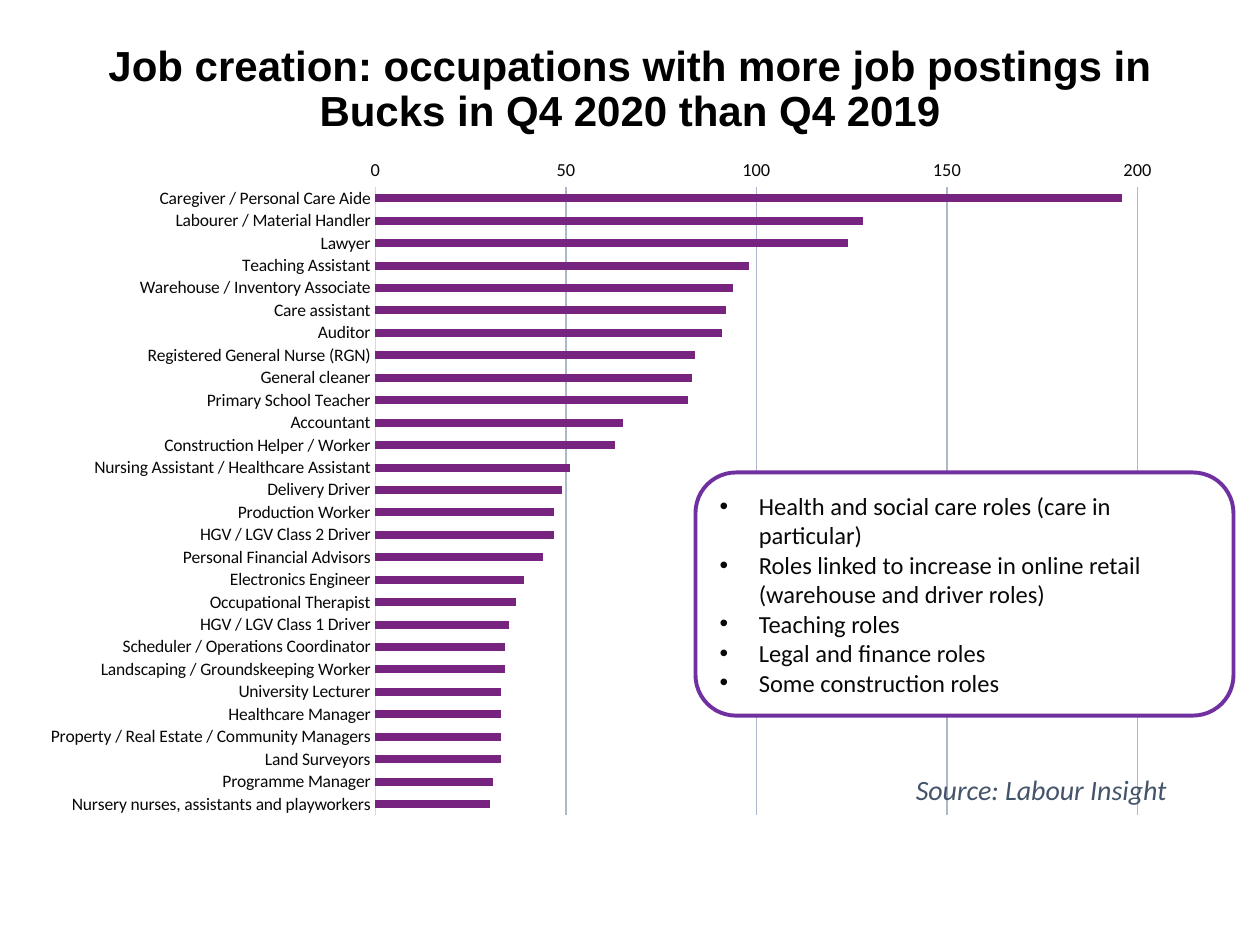
from lxml import etree
from pptx import Presentation
from pptx.chart.data import CategoryChartData
from pptx.dml.color import RGBColor
from pptx.enum.chart import XL_CHART_TYPE, XL_TICK_MARK
from pptx.enum.shapes import MSO_SHAPE
from pptx.enum.text import MSO_ANCHOR, MSO_AUTO_SIZE, PP_ALIGN
from pptx.oxml import parse_xml
from pptx.oxml.ns import nsdecls, qn
from pptx.util import Pt

BAR = XL_CHART_TYPE.BAR_CLUSTERED
NO_TICK = XL_TICK_MARK.NONE
ROUNDED = MSO_SHAPE.ROUNDED_RECTANGLE
MIDDLE = MSO_ANCHOR.MIDDLE
CENTER, LEFT = PP_ALIGN.CENTER, PP_ALIGN.LEFT
GROW, FIXED = MSO_AUTO_SIZE.SHAPE_TO_FIT_TEXT, MSO_AUTO_SIZE.NONE

EMU_PER_PX = 9144  # 100 px to the inch
TITLE_ONLY = 5
COLOURS = {
    "black": "000000", "ink": "080808", "white": "FFFFFF", "bar": "772480",
    "border": "7030A0", "grid": "ADB9CA", "axis": "D9D9D9", "source": "44546A",
}
POSTINGS = {
    "Caregiver / Personal Care Aide": 196,
    "Labourer / Material Handler": 128,
    "Lawyer": 124,
    "Teaching Assistant": 98,
    "Warehouse / Inventory Associate": 94,
    "Care assistant": 92,
    "Auditor": 91,
    "Registered General Nurse (RGN)": 84,
    "General cleaner": 83,
    "Primary School Teacher": 82,
    "Accountant": 65,
    "Construction Helper / Worker": 63,
    "Nursing Assistant / Healthcare Assistant": 51,
    "Delivery Driver": 49,
    "Production Worker": 47,
    "HGV / LGV Class 2 Driver": 47,
    "Personal Financial Advisors": 44,
    "Electronics Engineer": 39,
    "Occupational Therapist": 37,
    "HGV / LGV Class 1 Driver": 35,
    "Scheduler / Operations Coordinator": 34,
    "Landscaping / Groundskeeping Worker": 34,
    "University Lecturer": 33,
    "Healthcare Manager": 33,
    "Property / Real Estate / Community Managers": 33,
    "Land Surveyors": 33,
    "Programme Manager": 31,
    "Nursery nurses, assistants and playworkers": 30,
}
ROLES = [
    "Health and social care roles (care in particular)",
    "Roles linked to increase in online retail (warehouse and driver roles)",
    "Teaching roles",
    "Legal and finance roles",
    "Some construction roles",
]


def px(length):
    return length * EMU_PER_PX


def colour(name):
    return RGBColor.from_string(COLOURS[name])


class SlideBuilder:
    """Holds the text style and the current slide."""

    heading_font = "Arial"
    body_font = "Calibri"

    def __init__(self, page):
        self.page = page

    def style(self, font, size, ink, name=body_font, bold=False, italic=False):
        font.name, font.size = name, Pt(size)
        font.bold, font.italic = bold, italic
        font.color.rgb = colour(ink)

    def add_span(self, para, text, size, ink, **look):
        span = para.add_run()
        span.text = text
        self.style(span.font, size, ink, **look)

    def title(self, bounds, text):
        box = self.page.shapes.title
        box.left, box.top, box.width, box.height = map(px, bounds)
        frame = box.text_frame
        frame.vertical_anchor, frame.auto_size = MIDDLE, FIXED
        para = frame.paragraphs[0]
        para.alignment, para.line_spacing = CENTER, 0.9
        self.add_span(para, text, 24, "black", name=self.heading_font, bold=True)

    def bar_chart(self, bounds, values, plot_area):
        data = CategoryChartData(number_format="#,##0")
        data.categories = list(values)
        data.add_series("Series 1", list(values.values()))
        chart = self.page.shapes.add_chart(BAR, *map(px, bounds), data).chart
        chart.has_legend = chart.has_title = False
        self.style(chart.font, 10, "black")

        # Bars
        plot = chart.plots[0]
        plot.gap_width, plot.vary_by_categories = 182, False
        fill = plot.series[0].format.fill
        fill.solid()
        fill.fore_color.rgb = colour("bar")

        # Axes
        names, scale = chart.category_axis, chart.value_axis
        for axis, size in ((names, 10), (scale, 10.5)):
            axis.major_tick_mark = axis.minor_tick_mark = NO_TICK
            self.style(axis.tick_labels.font, size, "ink")
        names.reverse_order = True
        names.format.line.color.rgb = colour("axis")
        names.format.line.width = Pt(0.75)
        scale.minimum_scale, scale.maximum_scale, scale.major_unit = 0, 250, 50
        scale.tick_labels.number_format = "#,##0"
        scale.tick_labels.number_format_is_linked = False
        scale.format.line.fill.background()
        scale.has_major_gridlines = True
        scale.major_gridlines.format.line.color.rgb = colour("grid")
        scale.major_gridlines.format.line.width = Pt(0.75)

        # Fixed plot area, as fractions of the chart
        parts = [("layoutTarget", "inner"), ("xMode", "edge"), ("yMode", "edge")]
        parts += zip("xywh", plot_area)
        inner = "".join(f'<c:{tag} val="{value}"/>' for tag, value in parts)
        layout = parse_xml(f'<c:layout {nsdecls("c")}><c:manualLayout>{inner}'
                           '</c:manualLayout></c:layout>')
        area = plot._element.getparent()
        for old in area.findall(qn("c:layout")):
            area.remove(old)
        area.insert(0, layout)

    def bullet_panel(self, bounds, items):
        panel = self.page.shapes.add_shape(ROUNDED, *map(px, bounds))
        panel.shadow.inherit = False
        panel.fill.solid()
        panel.fill.fore_color.rgb = colour("white")
        panel.line.color.rgb = colour("border")
        panel.line.width = Pt(2.25)
        frame = panel.text_frame
        frame.word_wrap, frame.vertical_anchor = True, MIDDLE
        for index, item in enumerate(items):
            para = frame.add_paragraph() if index else frame.paragraphs[0]
            para.alignment = LEFT
            props = para._p.get_or_add_pPr()
            props.set("marL", str(px(31)))
            props.set("indent", str(-px(31)))
            etree.SubElement(props, qn("a:buFont"), typeface="Arial")
            etree.SubElement(props, qn("a:buChar"), char="•")
            self.add_span(para, item, 14, "ink")

    def note(self, bounds, text):
        box = self.page.shapes.add_textbox(*map(px, bounds))
        frame = box.text_frame
        frame.word_wrap, frame.auto_size = True, GROW
        para = frame.paragraphs[0]
        para.line_spacing, para.space_after = 1.07, Pt(8)
        self.add_span(para, text, 16, "source", italic=True)


def main():
    deck = Presentation()
    deck.slide_width, deck.slide_height = px(1000), px(750)
    builder = SlideBuilder(deck.slides.add_slide(deck.slide_layouts[TITLE_ONLY]))
    builder.title((69, 21, 862, 102), "Job creation: occupations with more job "
                  "postings in Bucks in Q4 2020 than Q4 2019")
    builder.bar_chart((21, 116, 1065, 542), POSTINGS, (0.26, 0.06, 0.71, 0.92))
    builder.bullet_panel((552, 375, 427, 193), ROLES)
    builder.note((717, 606, 667, 38), "Source: Labour Insight")
    deck.save("out.pptx")


if __name__ == "__main__":
    main()
